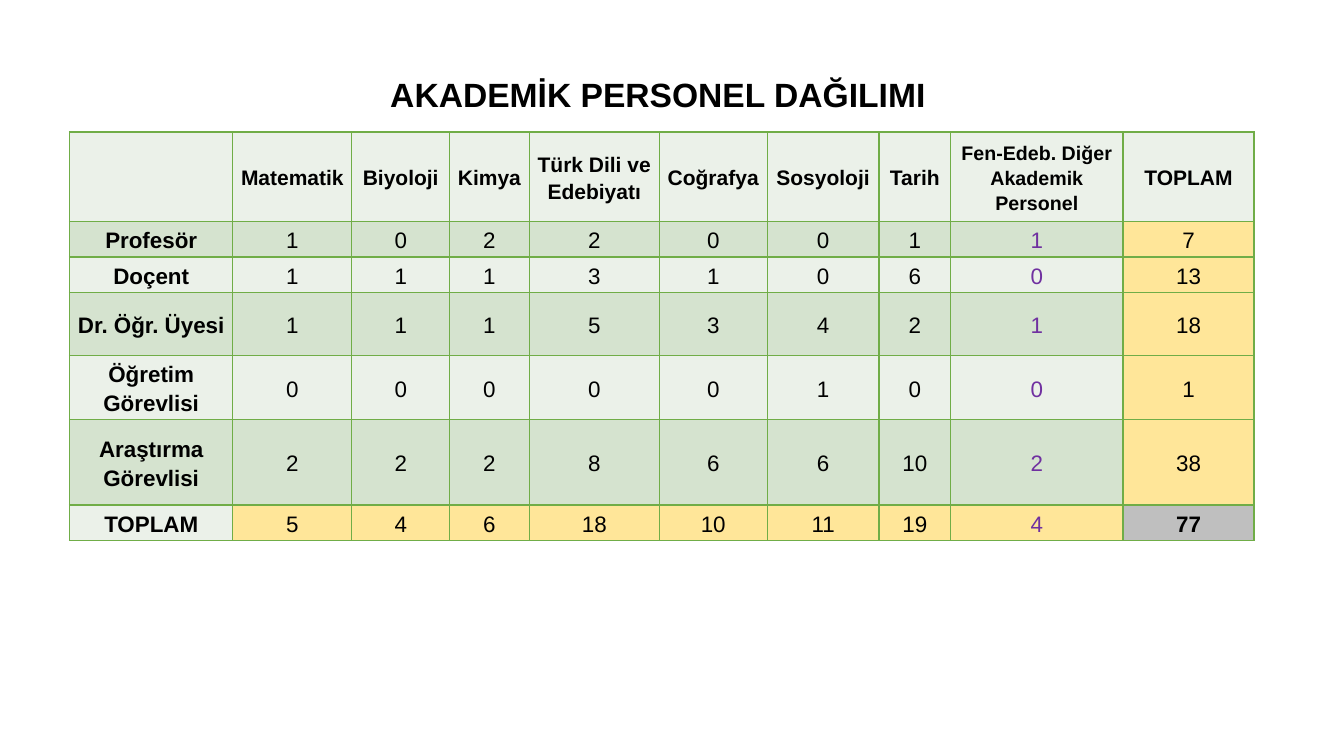
from pptx import Presentation
from pptx import util as u
from pptx.dml import color
from pptx.enum import text
from pptx.oxml import parse_xml
from pptx.oxml import ns


class Theme:
    font = "Arial"
    black, violet, green = "000000", "7030A0", "70AD47"
    pale, sage, gold, gray = "EBF1E9", "D5E3CF", "FFE699", "BFBFBF"
    title, body, head, small = 24, 16, 15, 14


def style(para, size, bold, tint):
    para.alignment = text.PP_ALIGN.CENTER
    para.font.name = Theme.font
    para.font.size = u.Pt(size)
    para.font.bold = bold
    para.font.color.rgb = color.RGBColor.from_string(tint)


def border(cell):
    props = cell._tc.get_or_add_tcPr()
    for side in "LRTB":
        props.append(parse_xml(
            f'<a:ln{side} {ns.nsdecls("a")} w="12700"><a:solidFill>'
            f'<a:srgbClr val="{Theme.green}"/></a:solidFill></a:ln{side}>'))


heads = ["", "Matematik", "Biyoloji", "Kimya", "Türk Dili ve Edebiyatı",
         "Coğrafya", "Sosyoloji", "Tarih",
         "Fen-Edeb. Diğer Akademik Personel", "TOPLAM"]
staff = {
    "Profesör": [1, 0, 2, 2, 0, 0, 1, 1],
    "Doçent": [1, 1, 1, 3, 1, 0, 6, 0],
    "Dr. Öğr. Üyesi": [1, 1, 1, 5, 3, 4, 2, 1],
    "Öğretim Görevlisi": [0, 0, 0, 0, 0, 1, 0, 0],
    "Araştırma Görevlisi": [2, 2, 2, 8, 6, 6, 10, 2],
}
sums = [sum(col) for col in zip(*staff.values())]
rows = [heads]
for name, counts in [*staff.items(), ("TOPLAM", sums)]:
    rows.append([name, *counts, sum(counts)])
widths = [1.62, 1.18, 0.97, 0.79, 1.29, 1.07, 1.11, 0.71, 1.71, 1.3]
heights = [0.89, 0.35, 0.35, 0.63, 0.63, 0.85, 0.35]
last_row, last_col = len(rows) - 1, len(heads) - 1
other = last_col - 1

deck = Presentation()
deck.slide_width, deck.slide_height = u.Inches(13.33), u.Inches(7.5)
slide = deck.slides.add_slide(deck.slide_layouts[5])

title = slide.shapes.title
title.left, title.top = u.Inches(0.65), u.Inches(0.68)
title.width, title.height = u.Inches(11.75), u.Inches(0.5)
frame = title.text_frame
frame.text = "AKADEMİK PERSONEL DAĞILIMI"
frame.word_wrap = True
frame.auto_size = text.MSO_AUTO_SIZE.SHAPE_TO_FIT_TEXT
frame.vertical_anchor = text.MSO_ANCHOR.TOP
style(frame.paragraphs[0], Theme.title, True, Theme.black)

table = slide.shapes.add_table(
    len(rows), len(heads), u.Inches(0.69), u.Inches(1.31),
    u.Inches(sum(widths)), u.Inches(sum(heights))).table
table.first_row = table.horz_banding = False
for col, width in zip(table.columns, widths):
    col.width = u.Inches(width)
for row, height in zip(table.rows, heights):
    row.height = u.Inches(height)

for r, row in enumerate(rows):
    for c, value in enumerate(row):
        cell = table.cell(r, c)
        cell.text = str(value)
        cell.vertical_anchor = text.MSO_ANCHOR.MIDDLE
        cell.margin_left = cell.margin_right = u.Inches(0.07)
        cell.margin_top = cell.margin_bottom = 0

        grand = r == last_row and c == last_col
        total = r > 0 and c > 0 and (r == last_row or c == last_col)
        fill = Theme.sage if r % 2 else Theme.pale
        if grand:
            fill = Theme.gray
        elif total:
            fill = Theme.gold
        border(cell)
        cell.fill.solid()
        cell.fill.fore_color.rgb = color.RGBColor.from_string(fill)

        size = Theme.body
        if r == 0:
            size = Theme.small if c == other else Theme.head
        tint = Theme.violet if r > 0 and c == other else Theme.black
        para = cell.text_frame.paragraphs[0]
        para.line_spacing = 1.15
        style(para, size, r == 0 or c == 0 or grand, tint)

deck.save("out.pptx")
